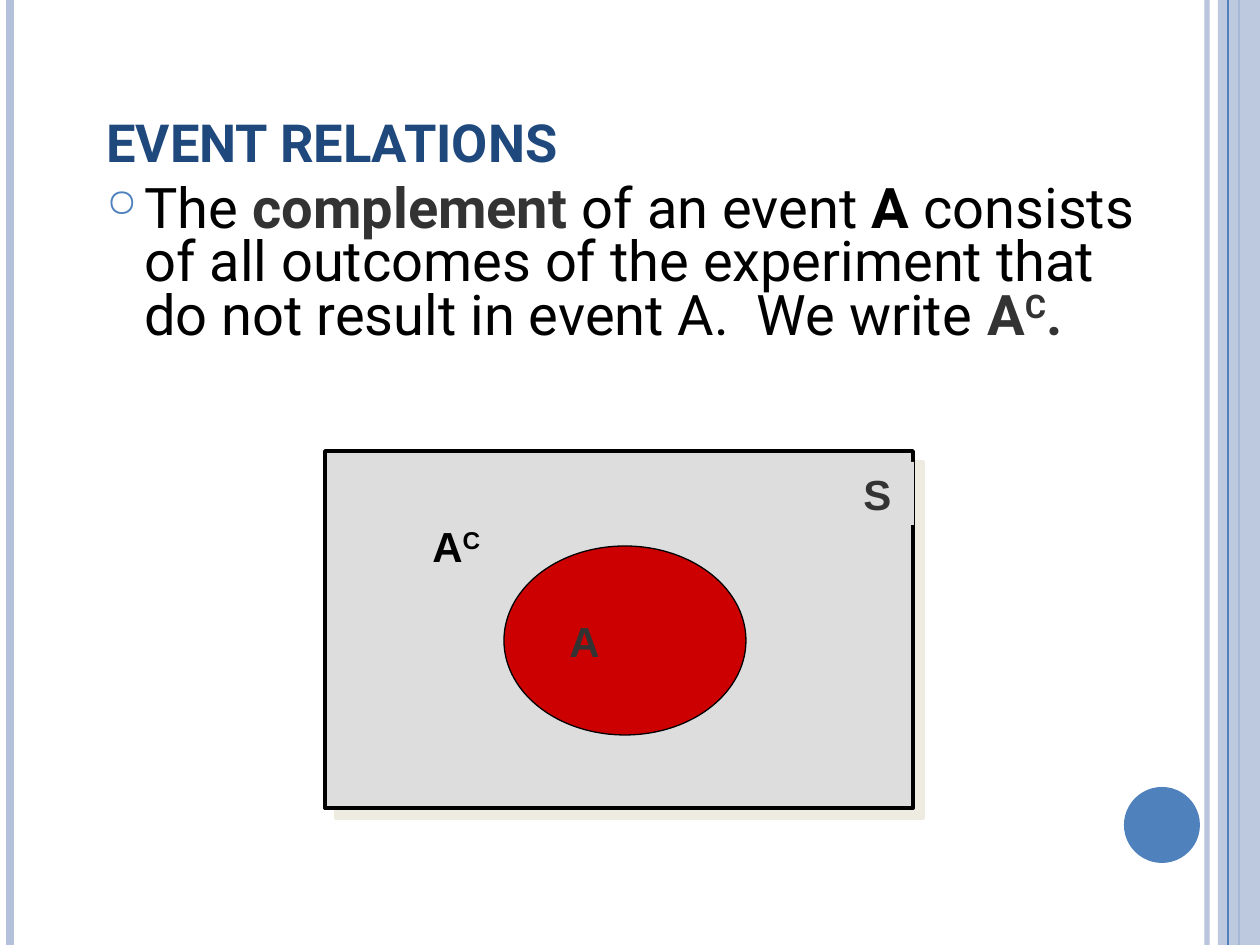
from lxml.etree import SubElement
from pptx import Presentation
from pptx.dml.color import RGBColor
from pptx.enum.shapes import MSO_CONNECTOR, MSO_SHAPE
from pptx.enum.text import MSO_ANCHOR
from pptx.oxml.ns import qn
from pptx.util import Emu, Pt

PX_PER_INCH = 126
PAGE_WIDTH, PAGE_HEIGHT = 1260, 945
BLUE, PALE_BLUE, NAVY = "4F81BD", "B3C1DB", "1F497D"
BLACK, DARK, GREY, RED, CREAM = "000000", "333333", "DDDDDD", "CC0000", "EEECE1"


def px(length):
    return Emu(round(length * 914400 / PX_PER_INCH))


def rgb(code):
    return RGBColor.from_string(code)


def add_xml(parent, tag, **attributes):
    names = {key: str(value) for key, value in attributes.items()}
    return SubElement(parent, qn(tag), names)


def set_opacity(properties, percent):
    """Make the first solid colour inside the shape properties translucent."""
    colour = next(properties.iter(qn("a:srgbClr")))
    add_xml(colour, "a:alpha", val=percent * 1000)


class Page:
    body_font, label_font = "Roboto", "Arial"
    label_size = 24

    def __init__(self, deck):
        self.shapes = deck.slides.add_slide(deck.slide_layouts[6]).shapes

    def vertical_line(self, x, color, width, opacity=100):
        line = self.shapes.add_connector(
            MSO_CONNECTOR.STRAIGHT, px(x), px(0), px(x), px(PAGE_HEIGHT))
        line.line.color.rgb = rgb(color)
        line.line.width = Pt(width)
        if opacity < 100:
            set_opacity(line._element.spPr, opacity)
        add_xml(line._element.spPr, "a:effectLst")

    def shape(self, kind, left, top, width, height, fill, line_width=0):
        shape = self.shapes.add_shape(kind, px(left), px(top), px(width), px(height))
        shape.shadow.inherit = False
        shape.fill.solid()
        shape.fill.fore_color.rgb = rgb(fill)
        if line_width:
            shape.line.color.rgb = rgb(BLACK)
            shape.line.width = Pt(line_width)
        else:
            shape.line.fill.background()
        return shape

    def drop_shadow(self, shape, color, distance):
        effects = shape._element.spPr.find(qn("a:effectLst"))
        shadow = add_xml(effects, "a:outerShdw", dist=Pt(distance),
                         dir=45 * 60000, algn="ctr", rotWithShape=0)
        add_xml(shadow, "a:srgbClr", val=color)

    def text(self, left, top, width, height, spans, font, size, anchor=MSO_ANCHOR.TOP):
        """Add one paragraph of (text, color, bold, raised) spans and return it."""
        box = self.shapes.add_textbox(px(left), px(top), px(width), px(height))
        box.text_frame.word_wrap = True
        box.text_frame.vertical_anchor = anchor
        para = box.text_frame.paragraphs[0]
        para.font.name = font
        para.font.size = Pt(size)
        for text, color, bold, raised in spans:
            span = para.add_run()
            span.text = text
            span.font.color.rgb = rgb(color)
            span.font.bold = bold
            if raised:
                span.font._element.set("baseline", "30000")
        return para

    def label(self, left, top, width, spans):
        para = self.text(left, top, width, 63, spans, self.label_font, self.label_size)
        para.space_before = Pt(3)

    def bullet(self, para, symbol, color, percent, indent):
        properties = para._p.get_or_add_pPr()
        properties.set("marL", str(px(indent)))
        properties.set("indent", str(-px(indent)))
        # Bullet settings must stand before the paragraph's default font.
        font = properties.find(qn("a:defRPr"))
        bullet_color = add_xml(properties, "a:buClr")
        add_xml(bullet_color, "a:srgbClr", val=color)
        add_xml(properties, "a:buSzPct", val=percent * 1000)
        add_xml(properties, "a:buChar", char=symbol)
        properties.append(font)


def draw_frame(page):
    page.vertical_line(1207, PALE_BLUE, 3, opacity=93)
    page.vertical_line(10, PALE_BLUE, 4.5)
    page.vertical_line(1239, BLUE, 1.5)
    band = page.shape(MSO_SHAPE.RECTANGLE, 1218, 0, 42, PAGE_HEIGHT, PALE_BLUE)
    set_opacity(band._element.spPr, 87)
    page.vertical_line(1228, BLUE, 0.75)
    page.shape(MSO_SHAPE.OVAL, 1124, 787, 76, 76, BLUE)


def draw_text(page):
    page.text(94, 21, 1071, 158, [("EVENT RELATIONS", NAVY, True, False)],
              page.body_font, 30, MSO_ANCHOR.BOTTOM)
    definition = page.text(94, 179, 1071, 252, [
        ("The", BLACK, False, False),
        (" complement ", DARK, True, False),
        ("of an event ", BLACK, False, False),
        ("A ", BLACK, True, False),
        ("consists of all outcomes of the experiment that do not result "
         "in event A.  We write ", BLACK, False, False),
        ("A", DARK, True, False),
        ("C", DARK, True, True),
        (".", DARK, True, False),
    ], page.body_font, 32)
    definition.line_spacing = 0.8
    definition.space_before = Pt(6)
    page.bullet(definition, "○", BLUE, 70, indent=38)


def draw_venn_diagram(page):
    sample_space = page.shape(MSO_SHAPE.RECTANGLE, 325, 451, 588, 357, GREY, 2.25)
    page.drop_shadow(sample_space, CREAM, 8.5)
    page.shape(MSO_SHAPE.RECTANGLE, 851, 462, 63, 63, GREY)
    page.label(851, 462, 63, [("S", DARK, True, False)])
    page.shape(MSO_SHAPE.OVAL, 504, 546, 242, 189, RED, 0.75)
    page.label(557, 609, 53, [("A", DARK, True, False)])
    page.label(420, 514, 84, [("A", BLACK, True, False), ("C", BLACK, True, True)])


def main():
    deck = Presentation()
    deck.slide_width, deck.slide_height = px(PAGE_WIDTH), px(PAGE_HEIGHT)
    page = Page(deck)
    draw_frame(page)
    draw_text(page)
    draw_venn_diagram(page)
    deck.save("out.pptx")


if __name__ == "__main__":
    main()
